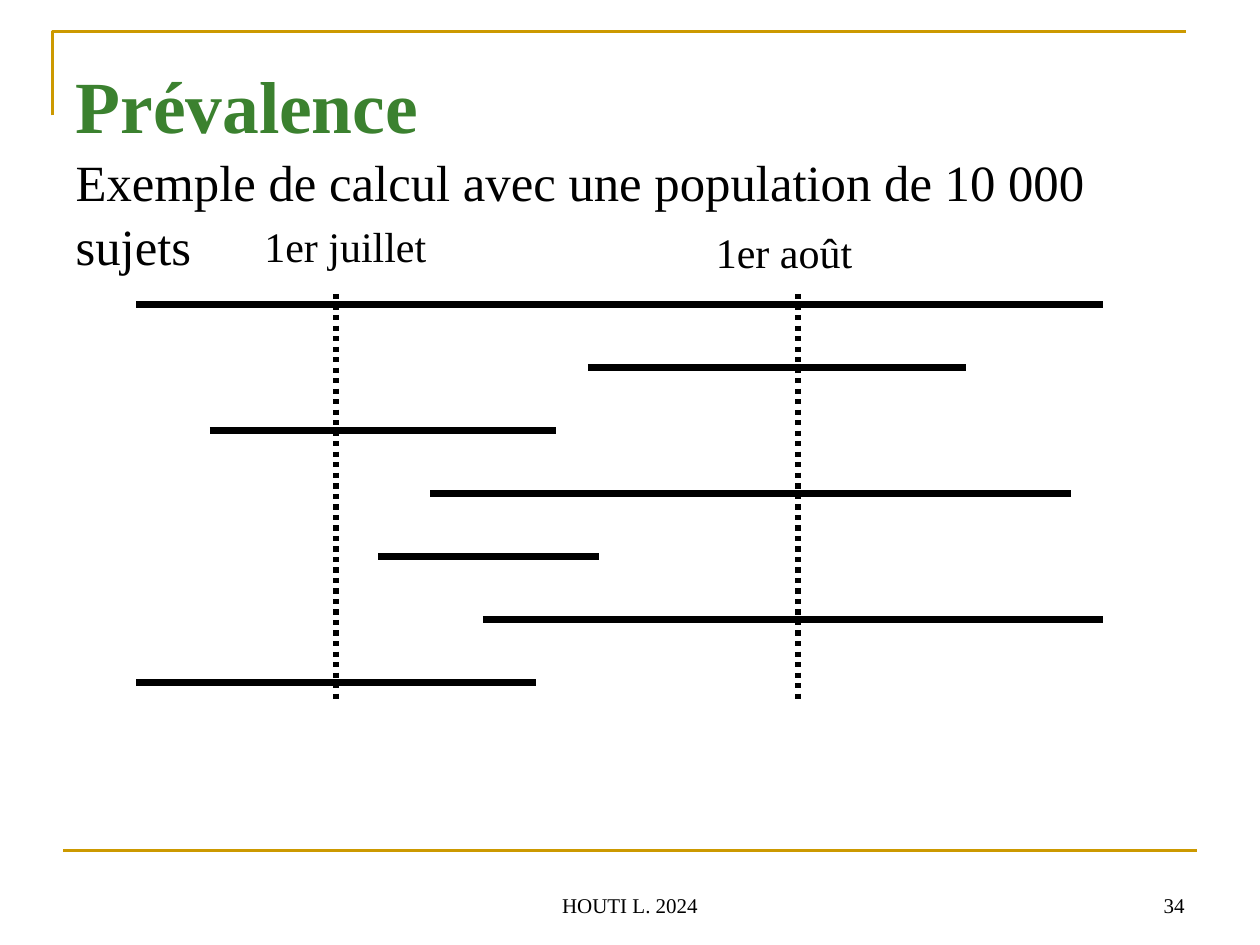
"""Build the slide on prevalence: spells of illness crossed by two dates."""
import pptx
import pptx.dml.color
import pptx.enum.dml
import pptx.enum.shapes
import pptx.enum.text
import pptx.util
from lxml import etree

HUES = {"gold": "CC9900", "green": "3B812F", "black": "000000"}
ALIGN = pptx.enum.text.PP_ALIGN
ANCHOR = pptx.enum.text.MSO_ANCHOR
DOTS = pptx.enum.dml.MSO_LINE.ROUND_DOT
RGB = pptx.dml.color.RGBColor.from_string

deck = pptx.Presentation()
deck.slide_width = pptx.util.Inches(10)
deck.slide_height = pptx.util.Inches(7.5)
unit = deck.slide_width // 120
slide = deck.slides.add_slide(deck.slide_layouts[5])
shapes = slide.shapes


def draw(x1, y1, x2, y2, hue, width, dash=None):
    ends = [round(n * unit) for n in (x1, y1, x2, y2)]
    line = shapes.add_connector(pptx.enum.shapes.MSO_CONNECTOR.STRAIGHT, *ends)
    line.line.color.rgb = RGB(HUES[hue])
    line.line.width = pptx.util.Pt(width)
    if dash:
        line.line.dash_style = dash
    props = line._element.spPr
    etree.SubElement(props, pptx.oxml.ns.qn("a:effectLst"))


def write(para, text, size, hue="black", bold=False):
    run = para.add_run()
    run.text = text
    form = {"name": "Times New Roman", "size": pptx.util.Pt(size), "bold": bold}
    for key, value in form.items():
        setattr(run.font, key, value)
    run.font.color.rgb = RGB(HUES[hue])


pen = shapes.build_freeform(5, 11, scale=unit)
pen.add_line_segments([(5, 3), (113, 3)], close=False)
frame = pen.convert_to_shape()
frame.shadow.inherit = False
frame.fill.background()
frame.line.color.rgb = RGB(HUES["gold"])
frame.line.width = pptx.util.Pt(1.5)
draw(6, 81, 114, 81, "gold", 1.5)

title = shapes.title
place = {"left": 6, "top": 4.3, "width": 105, "height": 11}
for key, value in place.items():
    setattr(title, key, round(value * unit))
form = {
    "word_wrap": True,
    "auto_size": pptx.enum.text.MSO_AUTO_SIZE.NONE,
    "vertical_anchor": ANCHOR.TOP,
    "margin_top": unit,
}
for key, value in form.items():
    setattr(title.text_frame, key, value)
para = title.text_frame.paragraphs[0]
para.alignment = ALIGN.LEFT
para.line_spacing = 1.05
write(para, "Prévalence", 42, "green", True)
para.add_line_break()
write(para, "Exemple de calcul avec une population de 10 000 sujets", 29)

spells = [(13, 105), (56, 92), (20, 53), (41, 102), (36, 57), (46, 105), (13, 51)]
for row, (start, end) in enumerate(spells):
    y = 29 + 6 * row
    draw(start, y, end, y, "black", 4)
for x in (32, 76):
    draw(x, 28, x, 67, "black", 3, DOTS)

labels = [
    ("1er juillet", 24, 20.4, 19, 24, ALIGN.LEFT, ANCHOR.MIDDLE),
    ("1er août", 67, 21, 19, 24, ALIGN.LEFT, ANCHOR.MIDDLE),
    ("HOUTI L. 2024", 41, 82, 38, 12, ALIGN.CENTER, ANCHOR.BOTTOM),
    ("34", 86, 82, 28, 12, ALIGN.RIGHT, ANCHOR.BOTTOM),
]
for text, x, y, width, size, align, anchor in labels:
    spot = [round(n * unit) for n in (x, y, width, 6)]
    body = shapes.add_textbox(*spot).text_frame
    body.word_wrap = True
    body.vertical_anchor = anchor
    body.paragraphs[0].alignment = align
    write(body.paragraphs[0], text, size)

deck.save("out.pptx")
